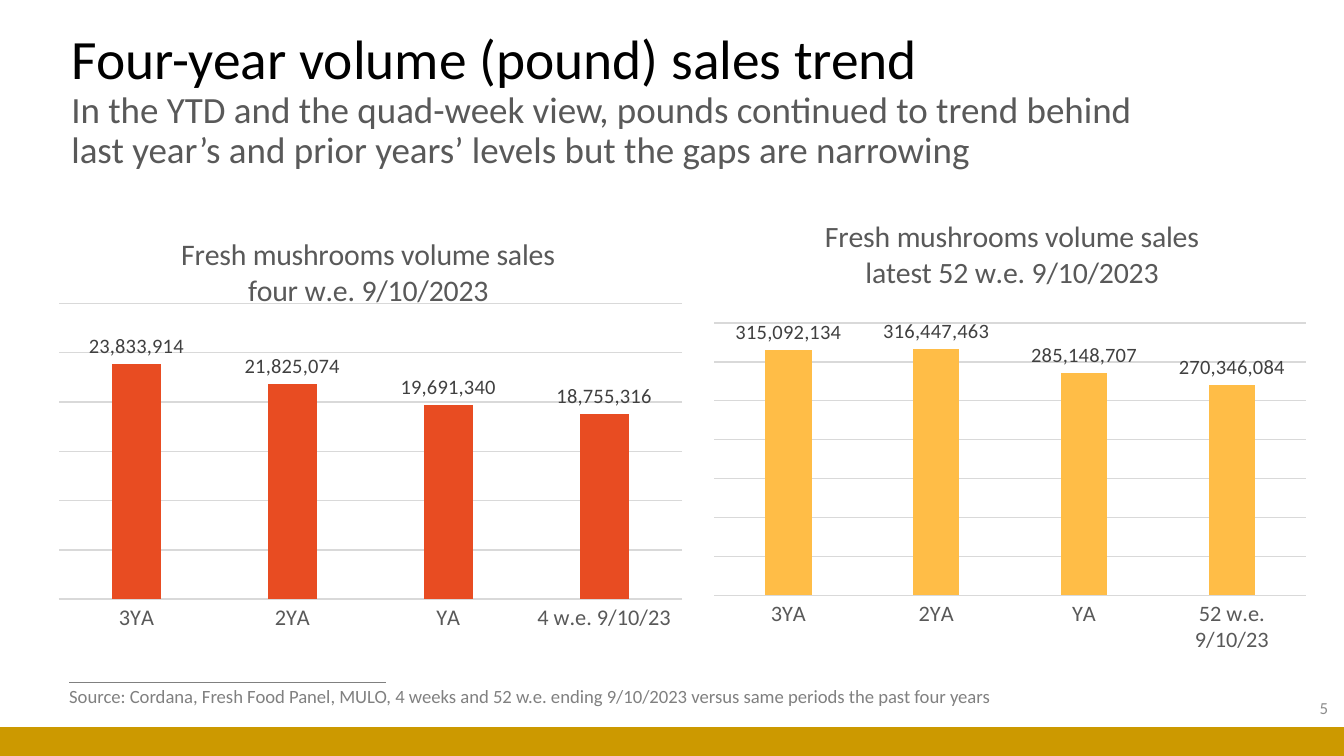
from dataclasses import dataclass

from lxml.etree import SubElement
from pptx import Presentation
from pptx.chart.data import CategoryChartData
from pptx.dml.color import RGBColor
from pptx.enum.chart import XL_CHART_TYPE, XL_LABEL_POSITION, XL_TICK_MARK
from pptx.enum.shapes import MSO_CONNECTOR, MSO_SHAPE
from pptx.enum.text import MSO_ANCHOR, MSO_AUTO_SIZE, PP_ALIGN
from pptx.oxml import parse_xml
from pptx.oxml.ns import nsdecls, qn
from pptx.util import Pt


@dataclass(frozen=True)
class Theme:
    font: str = "Calibri"
    black: str = "000000"
    dark: str = "404040"
    body: str = "595959"
    muted: str = "808080"
    number: str = "8C8C8C"
    grid: str = "D9D9D9"
    gold: str = "CC9900"
    orange: str = "E84C22"
    yellow: str = "FFBD47"
    title_size: float = 29.7
    subtitle_size: float = 19.8
    chart_title_size: float = 16
    axis_size: float = 12
    label_size: float = 11
    small_size: float = 10
    number_size: float = 9


THEME = Theme()
W, H = 720, 405


def style_font(font, size, color):
    font.name, font.size, font.bold = THEME.font, Pt(size), False
    font.color.rgb = RGBColor.from_string(color)


def add_text(p, text, size, color, align=None):
    """Append one formatted run to a paragraph."""
    if align is not None:
        p.alignment = align
    r = p.add_run()
    r.text = text
    style_font(r.font, size, color)


def add_box(s, x, y, w, h, text, size, color, align=PP_ALIGN.LEFT,
            anchor=MSO_ANCHOR.TOP, wrap=True, auto_size=MSO_AUTO_SIZE.NONE):
    tf = s.shapes.add_textbox(Pt(x), Pt(y), Pt(w), Pt(h)).text_frame
    tf.word_wrap, tf.auto_size, tf.vertical_anchor = wrap, auto_size, anchor
    add_text(tf.paragraphs[0], text, size, color, align)


def add_title(s, title, subtitle):
    sp = s.shapes.title
    sp.left, sp.top, sp.width, sp.height = Pt(31), Pt(26), Pt(601), Pt(57)
    tf = sp.text_frame
    tf.word_wrap, tf.auto_size = True, MSO_AUTO_SIZE.NONE
    tf.vertical_anchor = MSO_ANCHOR.MIDDLE
    p = tf.paragraphs[0]
    p.line_spacing = 0.9
    add_text(p, title, THEME.title_size, THEME.black, PP_ALIGN.LEFT)
    p.add_line_break()
    add_text(p, subtitle, THEME.subtitle_size, THEME.body)


def add_rule(s, x1, x2, y):
    line = s.shapes.add_connector(MSO_CONNECTOR.STRAIGHT, Pt(x1), Pt(y), Pt(x2), Pt(y))
    line.line.color.rgb = RGBColor.from_string(THEME.muted)
    line.line.width = Pt(0.5)
    SubElement(line._element.spPr, qn("a:effectLst"))


def add_band(s, y):
    sp = s.shapes.add_shape(MSO_SHAPE.RECTANGLE, 0, Pt(y), Pt(W), Pt(H - y))
    sp.shadow.inherit = False
    sp.fill.solid()
    sp.fill.fore_color.rgb = RGBColor.from_string(THEME.gold)
    sp.line.fill.background()


def set_layout(parent, index, inner=False, **fractions):
    """Place a chart part by fractions of the chart area."""
    for old in parent.findall(qn("c:layout")):
        parent.remove(old)
    values = {"xMode": "edge", "yMode": "edge", **fractions}
    if inner:
        values = {"layoutTarget": "inner", **values}
    items = "".join(f'<c:{k} val="{v}"/>' for k, v in values.items())
    parent.insert(index, parse_xml(
        f'<c:layout {nsdecls("c")}><c:manualLayout>{items}</c:manualLayout></c:layout>'))


def add_column_chart(s, x, w, title, title_at, cats, values, color, top, step, plot):
    data = CategoryChartData(number_format="#,##0")
    data.categories = cats
    data.add_series("Series 1", values)
    chart = s.shapes.add_chart(XL_CHART_TYPE.COLUMN_CLUSTERED, Pt(x), Pt(111.6),
                               Pt(w), Pt(238.3), data).chart
    style_font(chart.font, THEME.small_size, THEME.black)
    chart.has_legend = False

    # Chart title
    chart.has_title = True
    tf = chart.chart_title.text_frame
    for i, text in enumerate(title):
        p = tf.paragraphs[0] if i == 0 else tf.add_paragraph()
        add_text(p, text, THEME.chart_title_size, THEME.body, PP_ALIGN.CENTER)
    set_layout(chart.chart_title._element, 1, x=title_at[0], y=title_at[1])
    set_layout(chart._chartSpace.chart.plotArea, 0, inner=True,
               x=0, y=plot[0], w=1, h=plot[1])

    # Axes and gridlines
    axis = chart.category_axis
    axis.major_tick_mark = axis.minor_tick_mark = XL_TICK_MARK.NONE
    style_font(axis.tick_labels.font, THEME.axis_size, THEME.body)
    value_axis = chart.value_axis
    value_axis.minimum_scale, value_axis.maximum_scale = 0, top
    value_axis.major_unit = step
    value_axis.has_major_gridlines = True
    value_axis.visible = False
    for line in (axis.format.line, value_axis.major_gridlines.format.line):
        line.color.rgb = RGBColor.from_string(THEME.grid)
        line.width = Pt(0.75)

    # Columns and their labels
    columns = chart.plots[0]
    columns.gap_width, columns.overlap, columns.vary_by_categories = 219, -27, False
    fill = columns.series[0].format.fill
    fill.solid()
    fill.fore_color.rgb = RGBColor.from_string(color)
    labels = columns.series[0].data_labels
    labels.show_value = True
    labels.position = XL_LABEL_POSITION.OUTSIDE_END
    labels.number_format, labels.number_format_is_linked = "#,##0", False
    style_font(labels.font, THEME.label_size, THEME.dark)


def main():
    prs = Presentation()
    prs.slide_width, prs.slide_height = Pt(W), Pt(H)
    s = prs.slides.add_slide(prs.slide_layouts[5])

    # Footer rule and band
    add_rule(s, 37, 206.6, 365.6)
    add_band(s, 389.6)

    # Heading
    add_title(s, "Four-year volume (pound) sales trend",
              "In the YTD and the quad-week view, pounds continued to trend behind "
              "last year’s and prior years’ levels but the gaps are narrowing")

    # Slide number and source
    add_box(s, 556.6, 368.6, 162, 21.6, "5", THEME.number_size, THEME.number,
            align=PP_ALIGN.RIGHT, anchor=MSO_ANCHOR.MIDDLE)
    add_box(s, 30, 363.6, 511, 19.4,
            "Source: Cordana, Fresh Food Panel, MULO, 4 weeks and 52 w.e. ending "
            "9/10/2023 versus same periods the past four years",
            THEME.small_size, THEME.muted, wrap=False,
            auto_size=MSO_AUTO_SIZE.SHAPE_TO_FIT_TEXT)

    # Four-week and 52-week charts
    years = ["3YA", "2YA", "YA"]
    heading = "Fresh mushrooms volume sales"
    add_column_chart(s, 31, 334.8, [heading, "four w.e. 9/10/2023"], (0.19, 0.05),
                     years + ["4 w.e. 9/10/23"],
                     [23833914, 21825074, 19691340, 18755316],
                     THEME.orange, 30_000_000, 5_000_000, (0.214, 0.665))
    add_column_chart(s, 382.4, 317.5, [heading, "latest 52 w.e. 9/10/2023"], (0.18, 0.01),
                     years + ["52 w.e. 9/10/23"],
                     [315092134, 316447463, 285148707, 270346084],
                     THEME.yellow, 350_000_000, 50_000_000, (0.261, 0.619))

    prs.save("out.pptx")


if __name__ == "__main__":
    main()
